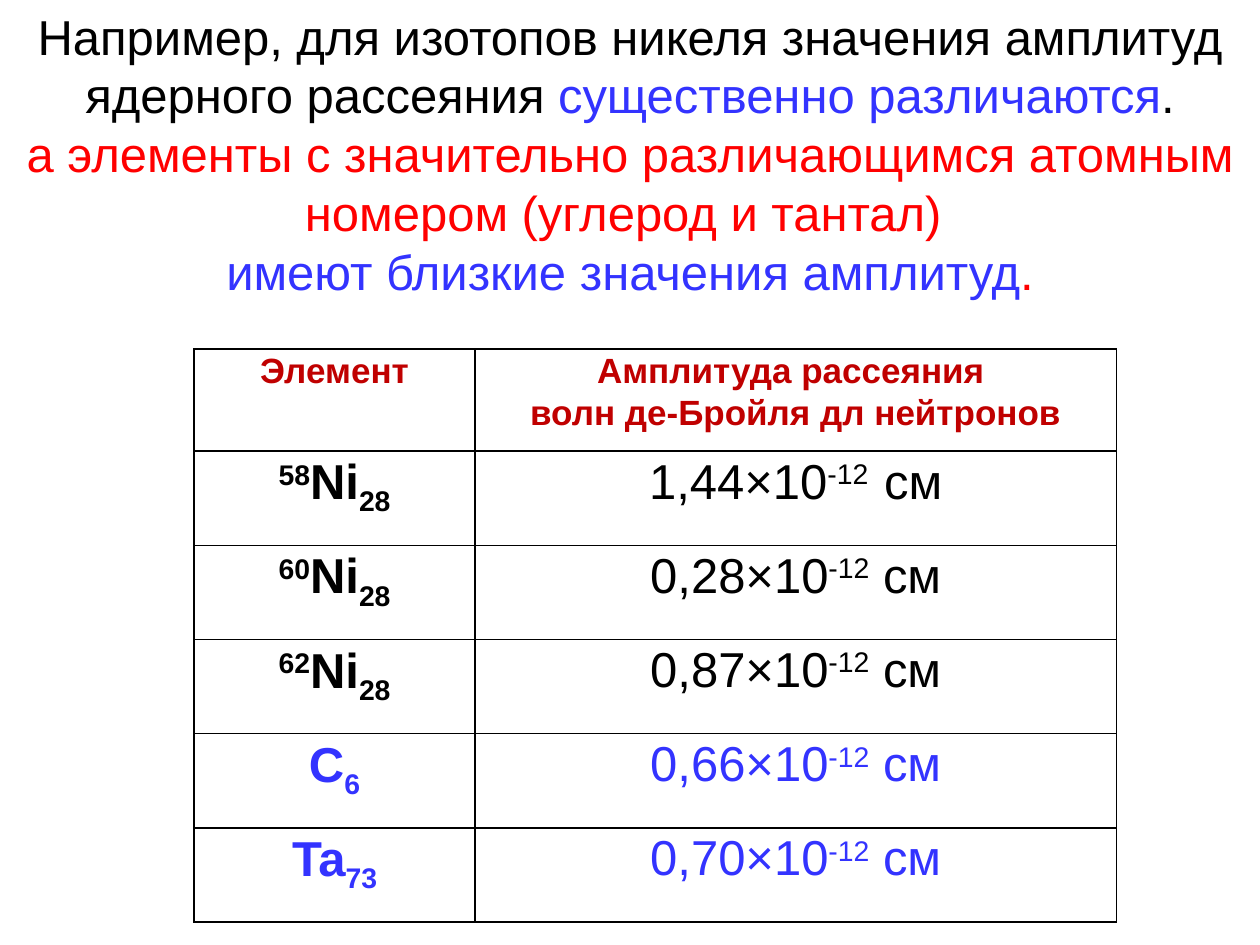
from lxml.etree import SubElement
from pptx import Presentation
from pptx.dml.color import RGBColor
from pptx.enum.shapes import MSO_SHAPE
from pptx.enum.text import MSO_ANCHOR, PP_ALIGN
from pptx.oxml.ns import qn
from pptx.util import Inches, Pt

WIDE, HIGH = 10, 7.5
BLACK, WHITE, BLUE, RED, DARK = "000000", "FFFFFF", "3333FF", "FF0000", "C00000"
SUP, SUB = 30, -25

INTRO = [
    [("Например, для изотопов никеля значения амплитуд ядерного рассеяния ", BLACK),
     ("существенно различаются", BLUE), (".", BLACK)],
    [("а элементы с значительно различающимся атомным номером (углерод и тантал) ", RED)],
    [("имеют близкие значения амплитуд", BLUE), (".", RED)],
]
HEADS = [["Элемент"], ["Амплитуда рассеяния ", "волн де-Бройля дл нейтронов"]]
# mass number, symbol, atomic number, amplitude, gap before the unit, colour
ROWS = [
    ("58", "Ni", "28", "1,44", ("-12  ", "см"), BLACK),
    ("60", "Ni", "28", "0,28", ("-12", " см"), BLACK),
    ("62", "Ni", "28", "0,87", ("-12", " см"), BLACK),
    ("", "С", "6", "0,66", ("-12", " см"), BLUE),
    ("", "Ta", "73", "0,70", ("-12", " см"), BLUE),
]


def paint(code):
    return RGBColor.from_string(code)


def add_run(para, text, color, size=28, bold=False, base=0):
    run = para.add_run()
    run.text = text
    font = run.font
    font.name, font.size, font.bold = "Arial", Pt(size), bold
    font.color.rgb = paint(color)
    if base:
        run._r.get_or_add_rPr().set("baseline", str(base * 1000))


def add_para(frame, first):
    para = frame.paragraphs[0] if first else frame.add_paragraph()
    para.alignment = PP_ALIGN.CENTER
    return para


def add_intro(slide, left, top, width, height):
    box = slide.shapes.add_shape(
        MSO_SHAPE.RECTANGLE, *map(Inches, (left, top, width, height)))
    box.shadow.inherit = False
    box.fill.solid()
    box.fill.fore_color.rgb = paint(WHITE)
    box.line.fill.background()
    frame = box.text_frame
    frame.word_wrap = True
    frame.vertical_anchor = MSO_ANCHOR.TOP
    for i, parts in enumerate(INTRO):
        para = add_para(frame, i == 0)
        for text, color in parts:
            add_run(para, text, color)


def add_border(cell):
    props = cell._tc.get_or_add_tcPr()
    for i, side in enumerate(("lnL", "lnR", "lnT", "lnB")):
        line = props.makeelement(qn(f"a:{side}"), {"w": str(Pt(1))})
        fill = SubElement(line, qn("a:solidFill"))
        SubElement(fill, qn("a:srgbClr"), val=BLACK)
        props.insert(i, line)


def fill_cell(cell, lines, color, size, bold):
    cell.fill.solid()
    cell.fill.fore_color.rgb = paint(WHITE)
    cell.margin_left = cell.margin_right = Inches(0.07)
    cell.margin_top = cell.margin_bottom = 0
    for i, parts in enumerate(lines):
        para = add_para(cell.text_frame, i == 0)
        para.line_spacing = 1.07
        for text, base in parts:
            if text:
                add_run(para, text, color, size, bold, base)
    add_border(cell)


def add_grid(slide, left, top, width, height):
    count = len(ROWS) + 1
    table = slide.shapes.add_table(
        count, 2, *map(Inches, (left, top, width, height))).table
    table.first_row = table.horz_banding = False
    first, head = 2.23, 0.81
    for col, size in zip(table.columns, (first, width - first)):
        col.width = Inches(size)
    for i, row in enumerate(table.rows):
        row.height = Inches((height - head) / len(ROWS) if i else head)
    for j, lines in enumerate(HEADS):
        fill_cell(table.cell(0, j), [[(text, 0)] for text in lines], DARK, 20, True)
    for i, (mass, name, atom, value, (power, unit), color) in enumerate(ROWS, 1):
        label = [(mass, SUP), (name, 0), (atom, SUB)]
        amount = [(value + "×10", 0), (power, SUP), (unit, 0)]
        fill_cell(table.cell(i, 0), [label], color, 28, True)
        fill_cell(table.cell(i, 1), [amount], color, 28, False)


def main():
    deck = Presentation()
    deck.slide_width, deck.slide_height = Inches(WIDE), Inches(HIGH)
    slide = deck.slides.add_slide(deck.slide_layouts[6])
    add_grid(slide, 1.54, 2.77, 7.32, 4.55)
    add_intro(slide, 0, 0, WIDE, 2.46)
    deck.save("out.pptx")


if __name__ == "__main__":
    main()
